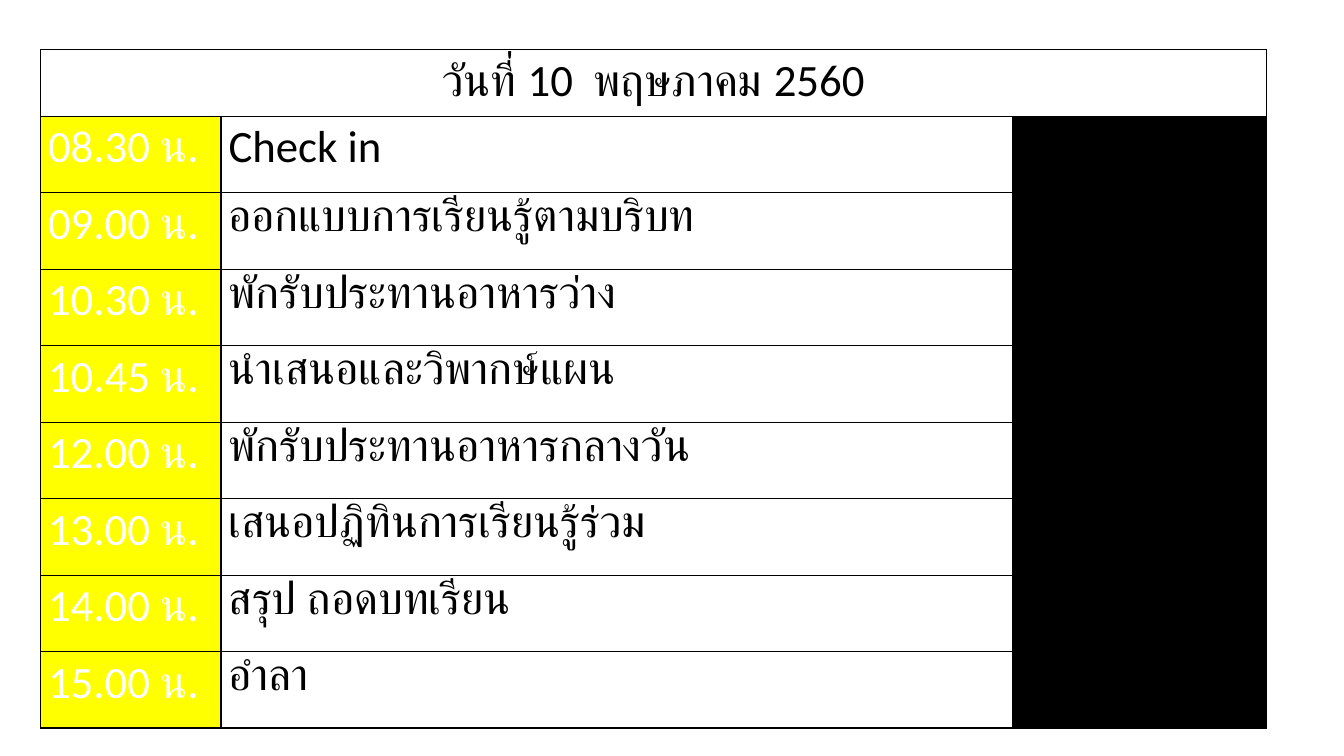
from dataclasses import dataclass

from lxml.etree import SubElement
from pptx import Presentation
from pptx.dml.color import RGBColor
from pptx.enum.text import PP_ALIGN
from pptx.oxml.ns import qn
from pptx.util import Cm, Pt


@dataclass(frozen=True)
class Theme:
    font: str = "Calibri"
    size: int = 32
    ink: str = "000000"
    pale: str = "FFFFFF"
    time: str = "FFFF00"
    line: int = 1


THEME = Theme()
DATE = "วันที่ 10  พฤษภาคม 2560"
AGENDA = [
    ("08.30 น.", "Check in"),
    ("09.00 น.", "ออกแบบการเรียนรู้ตามบริบท"),
    ("10.30 น.", "พักรับประทานอาหารว่าง"),
    ("10.45 น.", "นำเสนอและวิพากษ์แผน"),
    ("12.00 น.", "พักรับประทานอาหารกลางวัน"),
    ("13.00 น.", "เสนอปฏิทินการเรียนรู้ร่วม"),
    ("14.00 น.", "สรุป ถอดบทเรียน"),
    ("15.00 น.", "อำลา"),
]


def frame(cell):
    """Rule all four sides of a cell."""
    props = cell._tc.get_or_add_tcPr()
    for side in ("a:lnL", "a:lnR", "a:lnT", "a:lnB"):
        line = SubElement(props, qn(side), w=str(Pt(THEME.line)))
        fill = SubElement(line, qn("a:solidFill"))
        SubElement(fill, qn("a:srgbClr"), val=THEME.ink)


def paint(cell, color=None):
    frame(cell)
    if color:
        cell.fill.solid()
        cell.fill.fore_color.rgb = RGBColor.from_string(color)
    else:
        cell.fill.background()


def write(cell, text, color=THEME.ink, align=PP_ALIGN.LEFT):
    cell.margin_left = cell.margin_right = Cm(0.19)
    cell.margin_top = cell.margin_bottom = 0
    cell.text = text
    para = cell.text_frame.paragraphs[0]
    para.alignment = align
    para.line_spacing = 1.07
    para.font.name = THEME.font
    para.font.size = Pt(THEME.size)
    para.font.color.rgb = RGBColor.from_string(color)


def add_plan(slide, left, top, width, height):
    """Fill the given box with the day's timetable."""
    shape = slide.shapes.add_table(len(AGENDA) + 1, 3, left, top, width, height)
    table = shape.table
    table.first_row = table.horz_banding = False

    # Column and row sizes
    times, notes = Cm(4.55), Cm(6.38)
    for col, size in zip(table.columns, (times, width - times - notes, notes)):
        col.width = size
    head = Cm(1.68)
    for row in table.rows:
        row.height = (height - head) // len(AGENDA)
    table.rows[0].height = head

    # Date across the top
    for col in range(3):
        paint(table.cell(0, col))
    table.cell(0, 0).merge(table.cell(0, 2))
    write(table.cell(0, 0), DATE, align=PP_ALIGN.CENTER)

    # Time, topic and black column
    for row, (time, topic) in enumerate(AGENDA, 1):
        for col, color in enumerate((THEME.time, None, THEME.ink)):
            paint(table.cell(row, col), color)
        write(table.cell(row, 0), time, THEME.pale)
        write(table.cell(row, 1), topic)


def main():
    deck = Presentation()
    deck.slide_width, deck.slide_height = Cm(33.87), Cm(19.05)
    slide = deck.slides.add_slide(deck.slide_layouts[6])
    add_plan(slide, Cm(1.02), Cm(1.25), Cm(30.89), Cm(17.1))
    deck.save("out.pptx")


if __name__ == "__main__":
    main()
